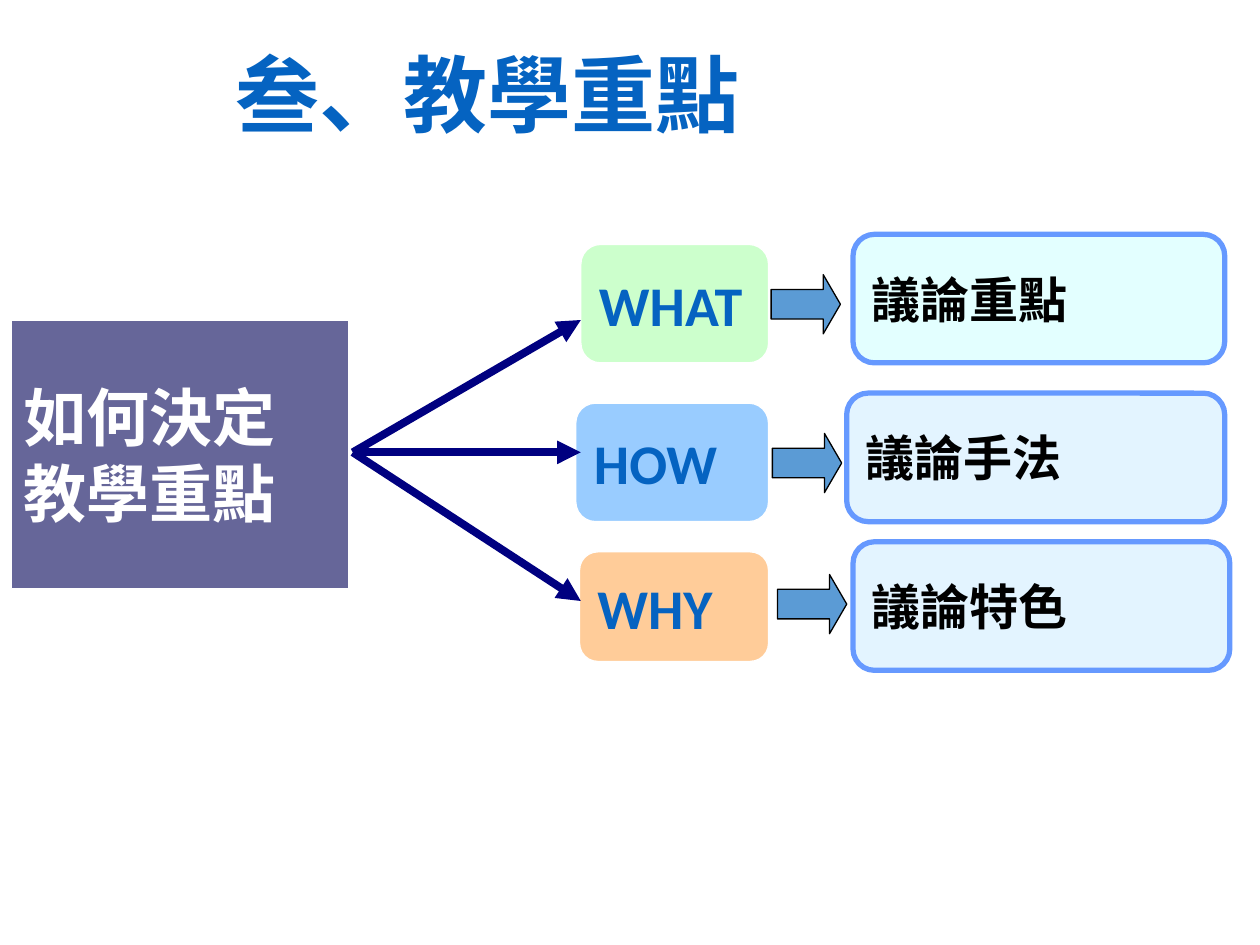
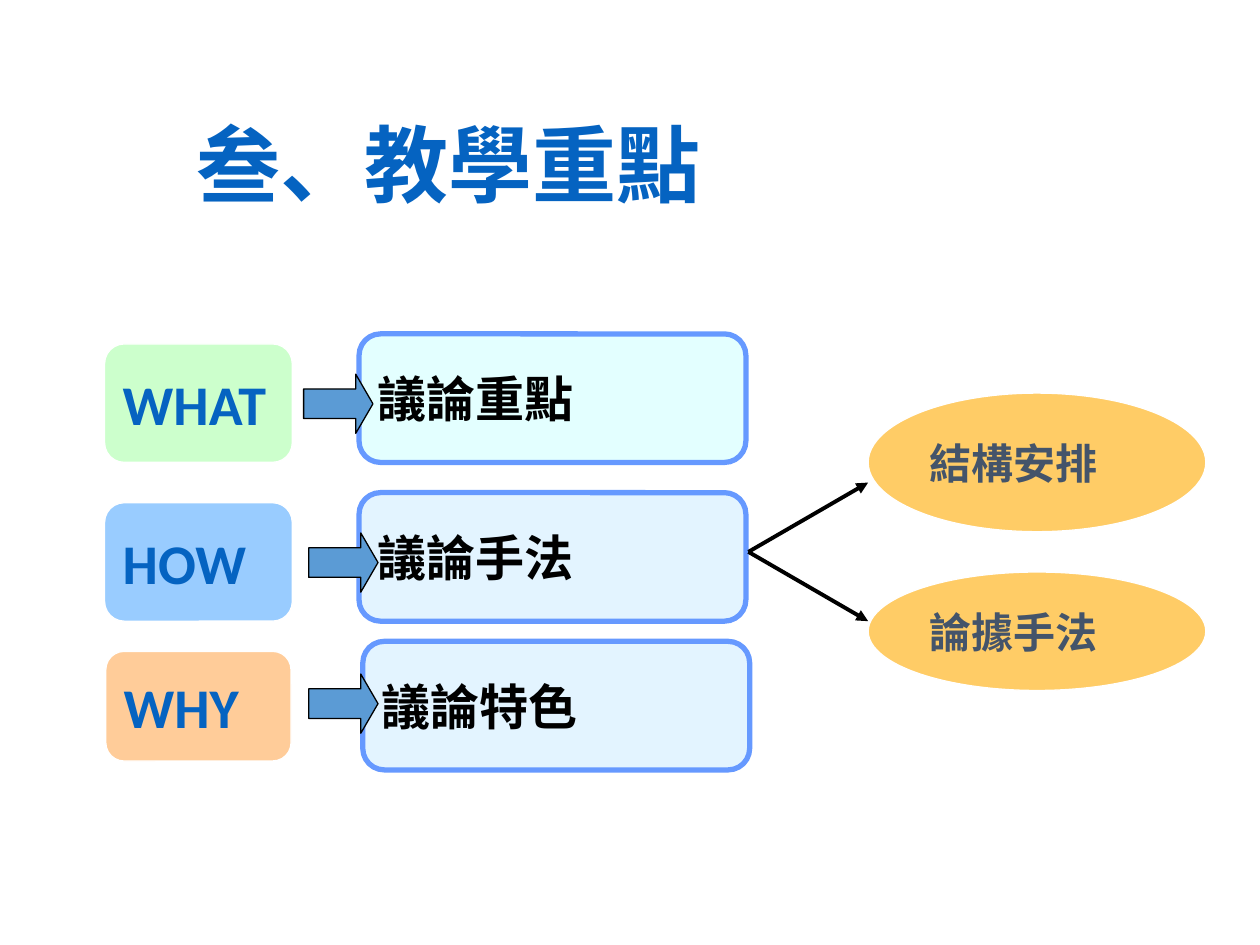
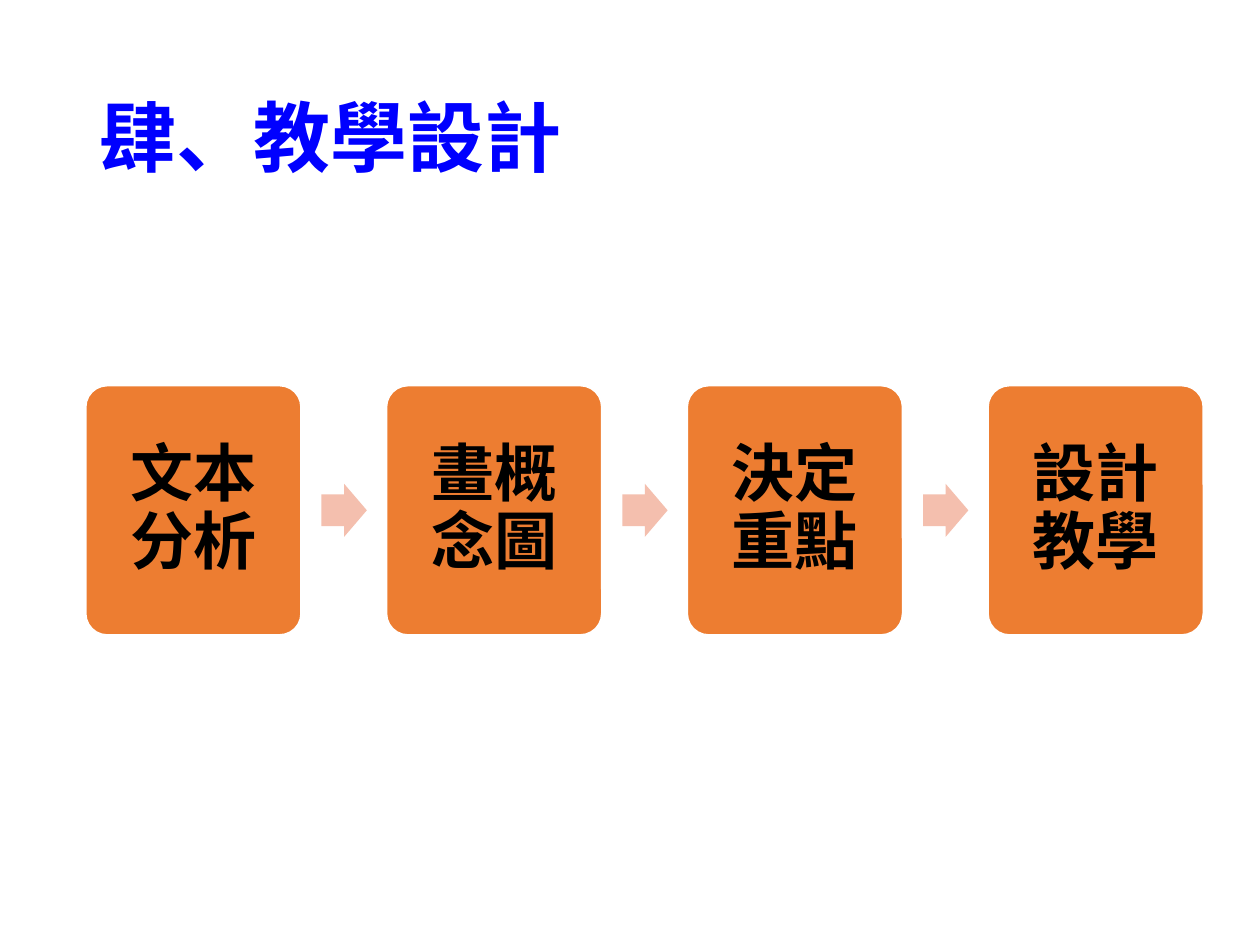
"""Build three slides on choosing teaching points and designing lessons."""
from typing import NamedTuple, Optional

from lxml import etree
from pptx import Presentation
from pptx import util as u
from pptx.dml.color import RGBColor
from pptx.enum import shapes, text
from pptx.oxml import ns

WIDTH, HEIGHT = u.Inches(10), u.Inches(7.5)
COLUMN, ROW = WIDTH / 100, HEIGHT / 75

WHITE = RGBColor(0xFF, 0xFF, 0xFF)
BLACK = RGBColor(0x00, 0x00, 0x00)
LINK_BLUE = RGBColor(0x05, 0x63, 0xC1)
PURE_BLUE = RGBColor(0x00, 0x00, 0xFF)
NAVY = RGBColor(0x00, 0x00, 0x80)
SLATE = RGBColor(0x44, 0x54, 0x6A)
PURPLE = RGBColor(0x66, 0x66, 0x99)
GREEN = RGBColor(0xCC, 0xFF, 0xCC)
SKY = RGBColor(0x99, 0xCC, 0xFF)
PEACH = RGBColor(0xFF, 0xCC, 0x99)
PALE_CYAN = RGBColor(0xCC, 0xFF, 0xFF)
PALE_BLUE = RGBColor(0xCC, 0xEC, 0xFF)
BORDER_BLUE = RGBColor(0x66, 0x99, 0xFF)
ARROW_BLUE = RGBColor(0x5B, 0x9B, 0xD5)
GOLD = RGBColor(0xFF, 0xCC, 0x66)
ORANGE = RGBColor(0xED, 0x7D, 0x31)
PINK = RGBColor(0xF4, 0xBF, 0xAE)

LATIN_FONT, CHINESE_FONT = "Calibri", "Noto Sans CJK SC"
KIND = shapes.MSO_SHAPE
TITLE_ONLY = 5


class Frame(NamedTuple):
    """A place on the grid, in columns and rows."""
    left: float
    top: float
    width: float
    height: float

    def lengths(self) -> tuple[int, ...]:
        """Return the place in slide units."""
        return (round(self.left * COLUMN), round(self.top * ROW),
                round(self.width * COLUMN), round(self.height * ROW))


class Style(NamedTuple):
    """The look of a shape."""
    kind: int
    fill: RGBColor
    line: Optional[RGBColor] = WHITE
    line_width: float = 0.75
    adjustments: tuple[float, ...] = ()
    opacity: int = 100


class Lettering(NamedTuple):
    """The look of a piece of text."""
    size: float
    color: RGBColor
    font: str = LATIN_FONT
    align: int = text.PP_ALIGN.LEFT
    spacing: float = 1.0
    wrap: bool = False


class Question(NamedTuple):
    """A question word, its topic and their rows."""
    word: str
    word_fill: RGBColor
    topic: str
    topic_fill: RGBColor
    word_top: float
    word_height: float
    arrow_top: float
    topic_top: float


class Places(NamedTuple):
    """The columns taken by one question on one slide."""
    word_left: float
    word_width: float
    arrow_left: float
    topic_left: float
    topic_width: float


QUESTIONS = (
    Question("WHAT", GREEN, "議論重點", PALE_CYAN, 19.4, 9.4, 21.8, 18.6),
    Question("HOW", SKY, "議論手法", PALE_BLUE, 32, 9.4, 34.4, 31.2),
    Question("WHY", PEACH, "議論特色", PALE_BLUE, 43.8, 8.7, 45.6, 43),
)
POINTS_TITLE = "叁、教學重點"
POINTS_LETTERING = Lettering(48, LINK_BLUE)
WORD_LETTERING = Lettering(32, LINK_BLUE)
TOPIC_LETTERING = Lettering(28, BLACK)
ARROW_STYLE = Style(KIND.RIGHT_ARROW, ARROW_BLUE, BLACK, adjustments=(0.5, 0.29))


def write(shape, content: str, lettering: Lettering) -> None:
    """Set the text of a shape and format its runs."""
    frame = shape.text_frame
    frame.text = content
    frame.word_wrap = lettering.wrap
    frame.vertical_anchor = text.MSO_ANCHOR.MIDDLE
    for paragraph in frame.paragraphs:
        paragraph.alignment = lettering.align
        paragraph.line_spacing = lettering.spacing
        for run in paragraph.runs:
            run.font.size = u.Pt(lettering.size)
            run.font.bold = True
            run.font.name = lettering.font
            run.font.color.rgb = lettering.color
            east_asian = etree.SubElement(run.font._element, ns.qn("a:ea"))
            east_asian.set("typeface", lettering.font)


def add_title(slide, content: str, frame: Frame, lettering: Lettering):
    """Move and fill the title placeholder."""
    title = slide.shapes.title
    title.left, title.top, title.width, title.height = frame.lengths()
    write(title, content, lettering)
    title.text_frame.auto_size = text.MSO_AUTO_SIZE.NONE
    return title


def add_figure(slide, frame: Frame, style: Style, content: str = "",
               lettering: Optional[Lettering] = None):
    """Draw a preset shape with optional text."""
    shape = slide.shapes.add_shape(style.kind, *frame.lengths())
    shape.shadow.inherit = False
    for index, value in enumerate(style.adjustments):
        shape.adjustments[index] = value
    shape.fill.solid()
    shape.fill.fore_color.rgb = style.fill
    if style.opacity < 100:
        color = shape.fill._xPr.find(".//" + ns.qn("a:srgbClr"))
        etree.SubElement(color, ns.qn("a:alpha")).set("val", str(style.opacity * 1000))
    if style.line is None:
        shape.line.fill.background()
    else:
        shape.line.color.rgb = style.line
        shape.line.width = u.Pt(style.line_width)
    if lettering:
        write(shape, content, lettering)
    return shape


def add_arrow(slide, start: tuple[float, float], end: tuple[float, float],
              color: RGBColor, width: float) -> None:
    """Draw a straight arrow between two grid points."""
    points = [round(value * unit) for point in (start, end)
              for value, unit in zip(point, (COLUMN, ROW))]
    arrow = slide.shapes.add_connector(shapes.MSO_CONNECTOR.STRAIGHT, *points)
    arrow.line.color.rgb = color
    arrow.line.width = u.Pt(width)
    etree.SubElement(arrow.line._get_or_add_ln(), ns.qn("a:tailEnd")).set("type", "triangle")
    etree.SubElement(arrow._element.spPr, ns.qn("a:effectLst"))


def add_questions(slide, places: tuple[Places, ...], down: float) -> None:
    """Draw every question word, its arrow and its topic."""
    for question, place in zip(QUESTIONS, places):
        add_figure(slide, Frame(place.topic_left, question.topic_top + down,
                                place.topic_width, 10.2),
                   Style(KIND.ROUNDED_RECTANGLE, question.topic_fill, BORDER_BLUE, 3,
                         opacity=55), question.topic, TOPIC_LETTERING)
        add_figure(slide, Frame(place.arrow_left, question.arrow_top + down, 5.5, 4.7),
                   ARROW_STYLE)
        add_figure(slide, Frame(place.word_left, question.word_top + down,
                                place.word_width, question.word_height),
                   Style(KIND.ROUNDED_RECTANGLE, question.word_fill),
                   question.word, WORD_LETTERING)


def build_deciding(slide) -> None:
    """Show how the teaching points are decided."""
    add_title(slide, POINTS_TITLE, Frame(17.7, 2.8, 42.4, 9.1), POINTS_LETTERING)
    add_figure(slide, Frame(0.9, 25.4, 26.8, 21.3), Style(KIND.RECTANGLE, PURPLE),
               "如何決定\n教學重點", Lettering(36, WHITE))
    add_questions(slide, (Places(46.1, 14.9, 61.2, 67.7, 29.5),
                          Places(45.7, 15.3, 61.3, 67.2, 30),
                          Places(46, 15, 61.7, 67.7, 29.9)), 0)
    for end_row in (25.4, 35.9, 47.7):
        add_arrow(slide, (28, 35.9), (46.1, end_row), NAVY, 4.5)


def build_methods(slide) -> None:
    """Show the two methods behind the argument."""
    add_title(slide, POINTS_TITLE, Frame(14.6, 8.4, 42.4, 9.1), POINTS_LETTERING)
    add_questions(slide, (Places(8.3, 14.9, 24.1, 28.5, 30.7),
                          Places(8.3, 14.9, 24.5, 28.5, 30.7),
                          Places(8.4, 14.7, 24.5, 28.8, 30.7)), 7.9)
    for method, top, height, end_row in (("結構安排", 31.2, 11, 38.3),
                                         ("論據手法", 45.4, 9.4, 49.3)):
        add_arrow(slide, (59.4, 43.8), (68.9, end_row), BLACK, 2.25)
        add_figure(slide, Frame(68.9, top, 26.8, height), Style(KIND.OVAL, GOLD),
                   method, Lettering(24, SLATE))


def build_design(slide) -> None:
    """Show the four steps of lesson design."""
    add_title(slide, "肆、教學設計", Frame(6.9, 4, 86.2, 14.5),
              Lettering(44, PURE_BLUE, CHINESE_FONT, spacing=0.9, wrap=True))
    step_style = Style(KIND.ROUNDED_RECTANGLE, ORANGE, WHITE, 1, (0.1,))
    step_lettering = Lettering(36, BLACK, CHINESE_FONT, text.PP_ALIGN.CENTER, 0.9, True)
    next_style = Style(KIND.RIGHT_ARROW, PINK, None, adjustments=(0.6, 0.5))
    for index, step in enumerate(("文本分析", "畫概念圖", "決定重點", "設計教學")):
        left = 6.8 + 23.87 * index
        if index:
            add_figure(slide, Frame(left - 5.15, 38.4, 3.6, 4.2), next_style)
        box = add_figure(slide, Frame(left, 30.6, 17.1, 19.8), step_style,
                         step, step_lettering)
        frame = box.text_frame
        frame.margin_left = frame.margin_right = u.Inches(0.15)
        frame.margin_top = frame.margin_bottom = u.Inches(0.15)


def main() -> None:
    """Build and save the presentation."""
    presentation = Presentation()
    presentation.slide_width, presentation.slide_height = WIDTH, HEIGHT
    for build in (build_deciding, build_methods, build_design):
        build(presentation.slides.add_slide(presentation.slide_layouts[TITLE_ONLY]))
    presentation.save("out.pptx")


if __name__ == "__main__":
    main()
